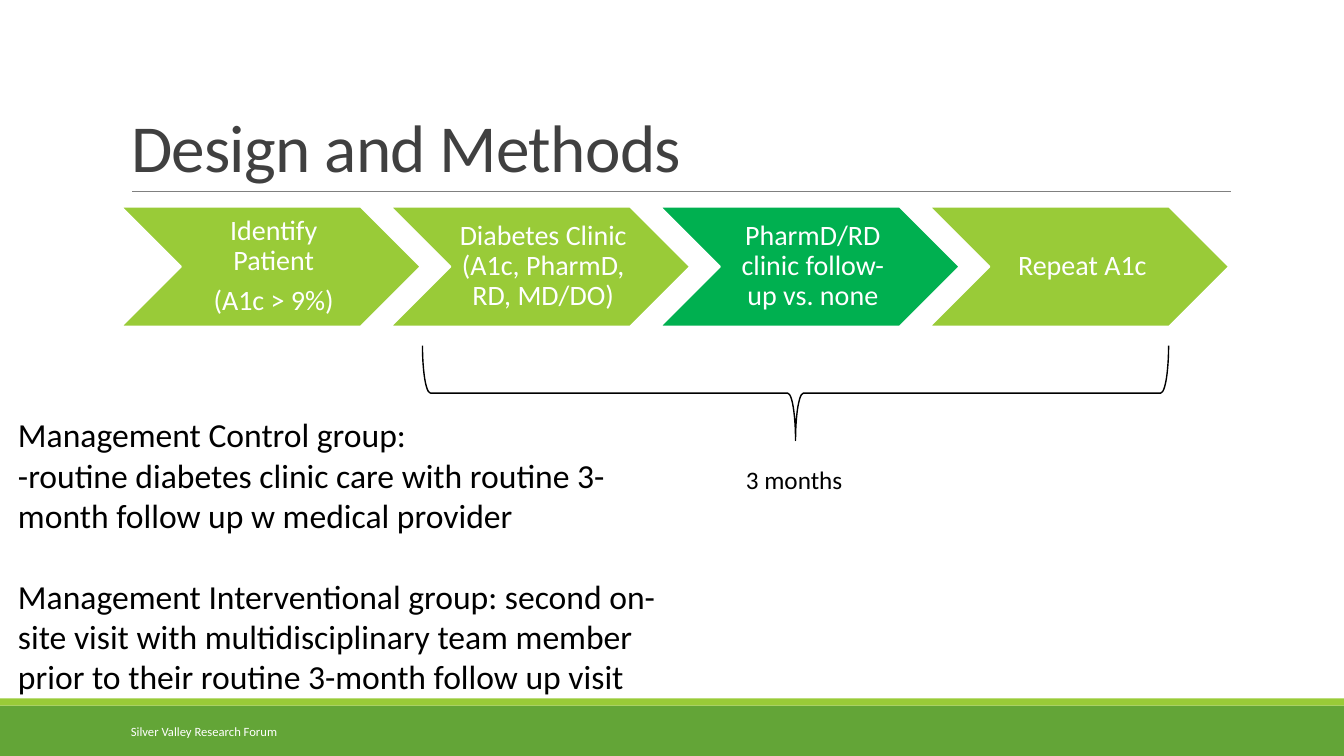
from lxml import etree
from pptx import Presentation
from pptx import util as u
from pptx.dml.color import RGBColor
from pptx.enum import shapes, text
from pptx.oxml.ns import qn

FONT = "Calibri"
LIME = "99CB38"
GREEN = "63A537"
EMERALD = "00B050"
WHITE = "FFFFFF"
BLACK = "000000"

STEPS = [
    (["Identify Patient", "(A1c > 9%)"], LIME),
    (["Diabetes Clinic (A1c, PharmD, RD, MD/DO)"], LIME),
    (["PharmD/RD clinic follow-up vs. none"], EMERALD),
    (["Repeat A1c"], LIME),
]
GROUPS = [
    "Management Control group:",
    "-routine diabetes clinic care with routine 3-month follow up w medical provider",
    "Management Interventional group: second on-site visit with multidisciplinary "
    "team member prior to their routine 3-month follow up visit",
]


def color(value):
    return RGBColor.from_string(value)


def write(frame, lines, size, ink, align=text.PP_ALIGN.LEFT):
    frame.word_wrap = True
    for index, line in enumerate(lines):
        para = frame.paragraphs[0] if index == 0 else frame.add_paragraph()
        para.text = line
        para.alignment = align
        para.font.name = FONT
        para.font.size = u.Pt(size)
        para.font.color.rgb = color(ink)
    return frame.paragraphs


def add_filled(page, preset, left, top, width, height, fill):
    shape = page.shapes.add_shape(
        preset, *map(u.Inches, (left, top, width, height)))
    shape.shadow.inherit = False
    shape.fill.solid()
    shape.fill.fore_color.rgb = color(fill)
    shape.line.fill.background()
    return shape


def add_text(page, left, top, width, height, lines, size, ink,
             align=text.PP_ALIGN.LEFT):
    box = page.shapes.add_textbox(*map(u.Inches, (left, top, width, height)))
    write(box.text_frame, lines, size, ink, align)
    return box


def add_heading(page, left, top, width, height):
    title = page.shapes.title
    title.left, title.top, title.width, title.height = map(
        u.Inches, (left, top, width, height))
    title.text_frame.vertical_anchor = text.MSO_ANCHOR.BOTTOM
    para = write(title.text_frame, ["Design and Methods"], 48, "404040")[0]
    para.line_spacing = 0.85
    para.runs[0].font._element.set("spc", "-50")

    bottom = u.Inches(top + height)
    rule = page.shapes.add_connector(
        shapes.MSO_CONNECTOR.STRAIGHT, u.Inches(left + 0.11), bottom,
        u.Inches(left + width + 0.01), bottom)
    rule.line.color.rgb = color("808080")
    rule.line.width = u.Pt(0.5)
    etree.SubElement(rule._element.spPr, qn("a:effectLst"))


def add_process(page, left, top, width, height):
    step_width = 2.97
    pitch = (width - step_width) / (len(STEPS) - 1)
    for index, (lines, fill) in enumerate(STEPS):
        step = add_filled(page, shapes.MSO_SHAPE.CHEVRON, left + index * pitch,
                          top, step_width, height, fill)
        step.line.color.rgb = color(WHITE)
        step.line.width = u.Pt(1.25)
        frame = step.text_frame
        frame.vertical_anchor = text.MSO_ANCHOR.MIDDLE
        frame.margin_left = u.Inches(0.09)
        frame.margin_right = frame.margin_top = frame.margin_bottom = u.Inches(0.03)
        for para in write(frame, lines, 20, WHITE, text.PP_ALIGN.CENTER):
            para.line_spacing = 0.9
            para.space_after = u.Pt(7)


def add_duration(page, left, top, width, height):
    center = left + width / 2
    brace = page.shapes.add_shape(
        shapes.MSO_SHAPE.RIGHT_BRACE, u.Inches(center - height / 2),
        u.Inches(top + height / 2 - width / 2), u.Inches(height), u.Inches(width))
    brace.rotation = 90
    brace.shadow.inherit = False
    brace.fill.background()
    brace.line.color.rgb = color(BLACK)
    brace.line.width = u.Pt(1)
    label = add_text(page, center - 0.59, top + height + 0.19, 1.17, 0.4,
                     ["3 months"], 18, BLACK)
    label.text_frame.word_wrap = False


def add_groups(page, left, top, width, height):
    box = add_text(page, left, top, width, height, GROUPS, 24, BLACK)
    box.text_frame.paragraphs[-1].space_before = u.Pt(29)


def add_footer(page, left, top, width, height):
    stripe = 0.07
    bar = shapes.MSO_SHAPE.RECTANGLE
    add_filled(page, bar, left, top + stripe, width, height - stripe, GREEN)
    add_filled(page, bar, left, top, width, stripe, LIME)
    label = add_text(page, left + 1.2, top + 0.13, 2.7, 0.4,
                     ["Silver Valley Research Forum"], 9, WHITE)
    label.text_frame.vertical_anchor = text.MSO_ANCHOR.MIDDLE


def main():
    deck = Presentation()
    deck.slide_width = u.Inches(13.33)
    deck.slide_height = u.Inches(7.5)
    page = deck.slides.add_slide(deck.slide_layouts[5])
    add_footer(page, 0, 6.93, 13.33, 0.57)
    add_heading(page, 1.2, 0.31, 11, 1.59)
    add_process(page, 1.2, 2.05, 10.99, 1.19)
    add_duration(page, 4.19, 3.43, 7.4, 0.94)
    add_groups(page, 0.08, 4.06, 6.58, 2.93)
    deck.save("out.pptx")


if __name__ == "__main__":
    main()
